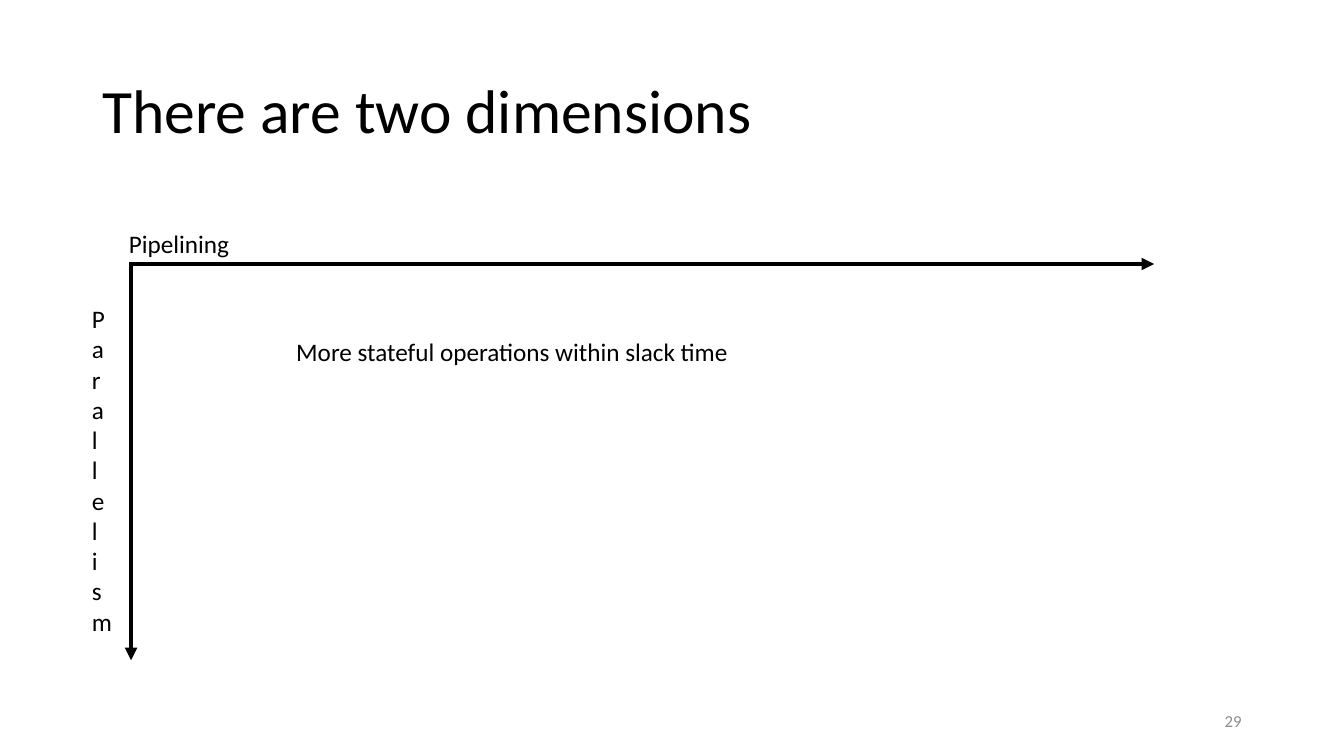
from lxml.etree import SubElement as Sub
from pptx import Presentation
from pptx.dml.color import RGBColor as Color
from pptx.enum.shapes import MSO_CONNECTOR as Line
from pptx.enum.text import MSO_ANCHOR as Anchor, PP_ALIGN as Align
from pptx.oxml.ns import qn
from pptx.util import Pt

INK = {"black": "000000", "grey": "8C8C8C"}
FONT = "Calibri"


def add_text(slide, text, box, size=18, ink="black",
             anchor=Anchor.TOP, align=Align.LEFT, space=1.0):
    shape = slide.shapes.add_textbox(*map(Pt, box))
    frame = shape.text_frame
    frame.word_wrap = True
    frame.vertical_anchor = anchor
    frame.text = text
    para = frame.paragraphs[0]
    para.alignment = align
    para.line_spacing = space
    font = para.runs[0].font
    font.name = FONT
    font.size = Pt(size)
    font.color.rgb = Color.from_string(INK[ink])


def add_arrow(slide, start, end):
    arrow = slide.shapes.add_connector(
        Line.STRAIGHT, *map(Pt, start + end))
    arrow.line.width = Pt(3)
    arrow.line.color.rgb = Color.from_string(INK["black"])
    Sub(arrow.line._get_or_add_ln(), qn("a:tailEnd"), type="triangle")
    Sub(arrow._element.spPr, qn("a:effectLst"))


def main():
    deck = Presentation()
    deck.slide_width, deck.slide_height = Pt(960), Pt(540)
    slide = deck.slides.add_slide(deck.slide_layouts[6])

    add_text(slide, "There are two dimensions", (66, 28.75, 828, 104.4),
             size=44, anchor=Anchor.MIDDLE, space=0.9)
    add_text(slide, "29", (678, 500.5, 216, 28.75),
             size=12, ink="grey", anchor=Anchor.MIDDLE, align=Align.RIGHT)

    top = 188.6
    add_arrow(slide, (92.2, top), (824.4, top))
    add_text(slide, "Pipelining", (85, 159.3, 208, 29))
    add_arrow(slide, (93.6, top), (93.6, 471.6))
    add_text(slide, "Parallelism", (58.5, 213.3, 20.9, 247))
    add_text(slide, "More stateful operations within slack time",
             (204.5, 236.7, 365.8, 29))

    deck.save("out.pptx")


if __name__ == "__main__":
    main()
